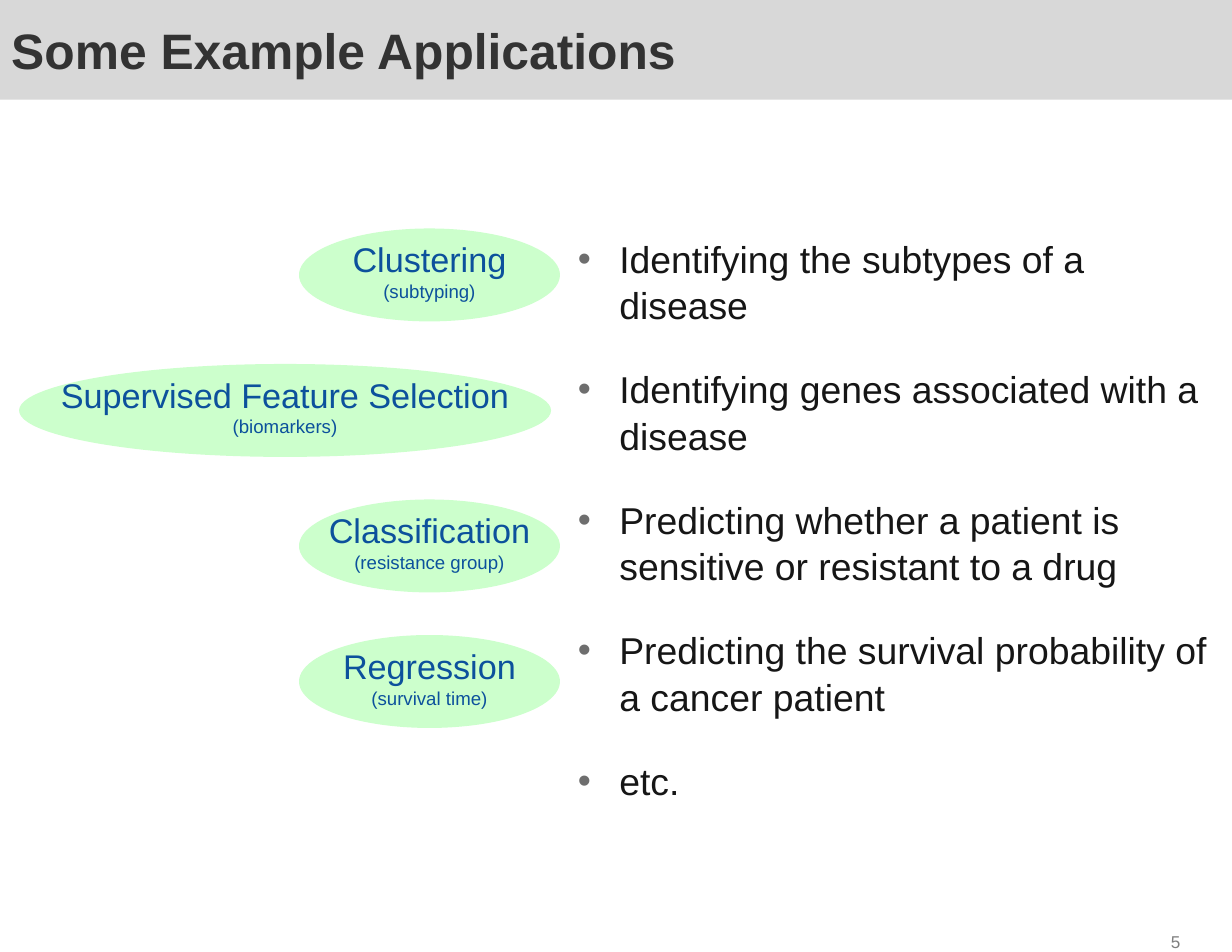
from lxml import etree
from pptx import Presentation
from pptx.dml.color import RGBColor
from pptx.enum.shapes import MSO_SHAPE
from pptx.enum.text import MSO_ANCHOR, MSO_AUTO_SIZE, PP_ALIGN
from pptx.oxml.ns import qn
from pptx.util import Inches, Pt

OVAL = MSO_SHAPE.OVAL
MIDDLE, TOP = MSO_ANCHOR.MIDDLE, MSO_ANCHOR.TOP
LEFT, CENTER, RIGHT = PP_ALIGN.LEFT, PP_ALIGN.CENTER, PP_ALIGN.RIGHT
NO_AUTOFIT = MSO_AUTO_SIZE.NONE

FONT = "Arial"
COLORS = {
    "band": "D8D8D8",
    "title": "333333",
    "body": "161616",
    "bullet": "6E6E6E",
    "oval": "CCFFCC",
    "method": "0C519C",
    "number": "7F7F7F",
}
METHODS = [
    ("Clustering", "(subtyping)", 2.67, 2.33),
    ("Supervised Feature Selection", "(biomarkers)", 0.17, 4.75),
    ("Classification", "(resistance group)", 2.67, 2.33),
    ("Regression", "(survival time)", 2.67, 2.33),
]
METHOD_TOP, METHOD_STEP = 2.04, 1.21
APPLICATIONS = [
    "Identifying the subtypes of a disease",
    "Identifying genes associated with a disease",
    "Predicting whether a patient is sensitive or resistant to a drug",
    "Predicting the survival probability of a cancer patient",
    "etc.",
]


def color(name):
    return RGBColor.from_string(COLORS[name])


def place(shape, left, top, width, height):
    shape.left, shape.top = Inches(left), Inches(top)
    shape.width, shape.height = Inches(width), Inches(height)


def prepare_frame(shape, anchor):
    frame = shape.text_frame
    frame.word_wrap = True
    frame.auto_size = NO_AUTOFIT
    frame.vertical_anchor = anchor
    return frame


def add_run(paragraph, text, size, color_name, align, bold=False):
    paragraph.alignment = align
    run = paragraph.add_run()
    run.text = text
    run.font.name = FONT
    run.font.size = Pt(size)
    run.font.bold = bold
    run.font.color.rgb = color(color_name)


def next_paragraph(frame, index):
    return frame.add_paragraph() if index else frame.paragraphs[0]


def set_bullet(paragraph):
    properties = paragraph._p.get_or_add_pPr()
    properties.set("marL", str(Inches(0.37)))
    properties.set("indent", str(Inches(-0.37)))
    bullet_color = etree.SubElement(properties, qn("a:buClr"))
    etree.SubElement(bullet_color, qn("a:srgbClr"), val=COLORS["bullet"])
    etree.SubElement(properties, qn("a:buFont"), typeface=FONT)
    etree.SubElement(properties, qn("a:buChar"), char="•")


def fill_title(title):
    place(title, 0, 0, 11, 0.89)
    title.fill.solid()
    title.fill.fore_color.rgb = color("band")
    frame = prepare_frame(title, MIDDLE)
    add_run(frame.paragraphs[0], "Some Example Applications", 32, "title", LEFT, True)


def fill_applications(body):
    place(body, 5.06, 2.04, 5.94, 5.38)
    frame = prepare_frame(body, TOP)
    for index, application in enumerate(APPLICATIONS):
        paragraph = next_paragraph(frame, index)
        set_bullet(paragraph)
        paragraph.line_spacing = 1.04
        paragraph.space_before = Pt(24 if index else 0)
        add_run(paragraph, application, 24, "body", LEFT)


def add_method(slide, top, name, purpose, left, width):
    group = slide.shapes.add_group_shape()
    oval = group.shapes.add_shape(
        OVAL, Inches(left), Inches(top), Inches(width), Inches(0.83))
    oval.shadow.inherit = False
    oval.fill.solid()
    oval.fill.fore_color.rgb = color("oval")
    oval.line.fill.background()
    label = group.shapes.add_textbox(
        Inches(left), Inches(top), Inches(width), Inches(0.75))
    frame = prepare_frame(label, MIDDLE)
    for index, (text, size) in enumerate([(name, 22), (purpose, 12)]):
        add_run(next_paragraph(frame, index), text, size, "method", CENTER)


def add_slide_number(slide, number):
    box = slide.shapes.add_textbox(
        Inches(9.22), Inches(8.28), Inches(1.41), Inches(0.2))
    frame = prepare_frame(box, TOP)
    frame.margin_left = frame.margin_right = Inches(0.09)
    frame.margin_top = frame.margin_bottom = Inches(0.04)
    add_run(frame.paragraphs[0], number, 11, "number", RIGHT)


def main():
    deck = Presentation()
    deck.slide_width, deck.slide_height = Inches(11), Inches(8.5)
    slide = deck.slides.add_slide(deck.slide_layouts[1])
    fill_title(slide.shapes.title)
    fill_applications(slide.placeholders[1])
    add_slide_number(slide, "5")
    for row, method in enumerate(METHODS):
        add_method(slide, METHOD_TOP + row * METHOD_STEP, *method)
    deck.save("out.pptx")


if __name__ == "__main__":
    main()
